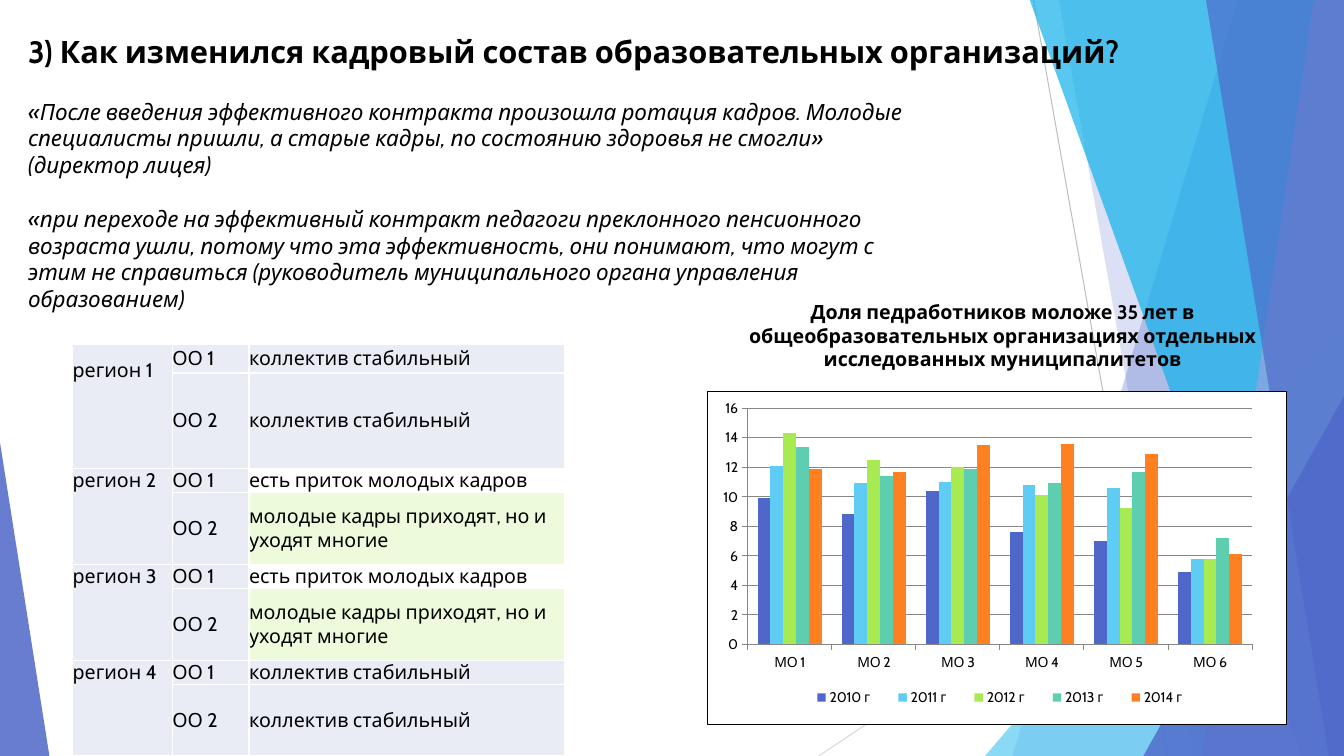
from lxml.etree import SubElement
from pptx import Presentation
from pptx.chart.data import CategoryChartData
from pptx.dml.color import RGBColor
from pptx.enum.chart import XL_CHART_TYPE as ChartType, XL_LEGEND_POSITION as LegendPosition
from pptx.enum.chart import XL_TICK_MARK as TickMark
from pptx.enum.shapes import MSO_CONNECTOR as Connector, MSO_SHAPE as Shape
from pptx.enum.text import MSO_ANCHOR as Anchor, PP_ALIGN as Align
from pptx.oxml.ns import qn
from pptx.util import Inches, Pt

FONT = "Cabin"
BLACK = RGBColor(0x00, 0x00, 0x00)
WHITE = RGBColor(0xFF, 0xFF, 0xFF)
INDIGO = RGBColor(0x4E, 0x67, 0xC8)
SKY = RGBColor(0x5E, 0xCC, 0xF3)
AZURE = RGBColor(0x12, 0xB2, 0xEB)
LAVENDER = RGBColor(0x95, 0xA4, 0xDE)
LIME = RGBColor(0xA7, 0xEA, 0x52)
TEAL = RGBColor(0x5D, 0xCE, 0xAF)
ORANGE = RGBColor(0xFF, 0x80, 0x21)
PALE_BLUE = RGBColor(0xE9, 0xEB, 0xF5)
PALE_GREEN = RGBColor(0xED, 0xFB, 0xDC)
GRAY = RGBColor(0xBF, 0xBF, 0xBF)
LIGHT_GRAY = RGBColor(0xD9, 0xD9, 0xD9)
AXIS_GRAY = RGBColor(0x87, 0x87, 0x87)

QUOTES = [
    "«После введения эффективного контракта произошла ротация кадров. Молодые специалисты "
    "пришли, а старые кадры, по состоянию здоровья не смогли» (директор лицея)",
    "«при переходе на эффективный контракт педагоги преклонного пенсионного возраста ушли, "
    "потому что эта эффективность, они понимают, что могут с этим не справиться "
    "(руководитель муниципального органа управления образованием)",
]
STABLE = [("коллектив стабильный", PALE_BLUE)] * 2
INFLOW = [("есть приток молодых кадров", WHITE),
          ("молодые кадры приходят, но и уходят многие", PALE_GREEN)]
REGIONS = [STABLE, INFLOW, INFLOW, STABLE]
SERIES = [
    ("2010 г", INDIGO, (9.9, 8.8, 10.4, 7.6, 7, 4.9)),
    ("2011 г", SKY, (12.1, 10.9, 11, 10.8, 10.6, 5.8)),
    ("2012 г", LIME, (14.3, 12.5, 12, 10.1, 9.2, 5.8)),
    ("2013 г", TEAL, (13.4, 11.4, 11.9, 10.9, 11.7, 7.2)),
    ("2014 г", ORANGE, (11.9, 11.7, 13.5, 13.6, 12.9, 6.1)),
]


def write_text(text_frame, *texts, size=14, bold=False, italic=False, align=Align.LEFT, gap=0):
    for index, text in enumerate(texts):
        paragraph = text_frame.add_paragraph() if index else text_frame.paragraphs[0]
        paragraph.alignment = align
        paragraph.space_before = Pt(gap if index else 0)
        run = paragraph.add_run()
        run.text = text
        run.font.name = FONT
        run.font.size = Pt(size)
        run.font.bold = bold
        run.font.italic = italic
        run.font.color.rgb = BLACK


def add_text(slide, box, *texts, **text_format):
    text_box = slide.shapes.add_textbox(*map(Inches, box))
    text_box.text_frame.word_wrap = True
    write_text(text_box.text_frame, *texts, **text_format)


def add_line(slide, start, end, color):
    line = slide.shapes.add_connector(Connector.STRAIGHT, *map(Inches, start + end))
    line.line.color.rgb = color
    line.line.width = Pt(0.75)
    SubElement(line._element.spPr, qn("a:effectLst"))


def paint(shape, color, opacity):
    shape.shadow.inherit = False
    shape.line.fill.background()
    shape.fill.solid()
    shape.fill.fore_color.rgb = color
    tint = shape._element.spPr.find(qn("a:solidFill"))[0]
    SubElement(tint, qn("a:alpha"), val=str(opacity * 1000))


def add_band(slide, box, top_left, bottom_left, color, opacity):
    left, top, width, height = box
    right, bottom = left + width, top + height
    corners = [(right, top), (right, bottom), (bottom_left, bottom)]
    builder = slide.shapes.build_freeform(Inches(top_left), Inches(top))
    builder.add_line_segments([(Inches(x), Inches(y)) for x, y in corners])
    paint(builder.convert_to_shape(), color, opacity)


def add_triangle(slide, box, apex, color, opacity):
    triangle = slide.shapes.add_shape(Shape.ISOSCELES_TRIANGLE, *map(Inches, box))
    triangle.adjustments[0] = apex
    paint(triangle, color, opacity)


def add_backdrop(slide, box):
    left, top, width, height = box
    right, bottom = left + width, top + height
    bands_box = (left, top - 0.01, width, height + 0.01)
    add_line(slide, (10.25, top), (11.58, bottom), GRAY)
    add_line(slide, (right, 4.03), (8.12, bottom), LIGHT_GRAY)
    add_band(slide, bands_box, 12.28, 10.04, INDIGO, 30)
    add_band(slide, bands_box, 10.5, 11.83, INDIGO, 20)
    add_triangle(slide, (right - 3.56, bottom - 4.17, 3.56, 4.17), 1, SKY, 72)
    add_band(slide, bands_box, 10.21, 12.91, AZURE, 70)
    add_band(slide, bands_box, 13.03, 11.92, LAVENDER, 70)
    add_band(slide, bands_box, 11.96, 13.18, INDIGO, 65)
    add_triangle(slide, (right - 1.99, bottom - 3.57, 1.99, 3.57), 1, INDIGO, 80)
    add_triangle(slide, (left, bottom - 3.11, 0.49, 3.11), 0, INDIGO, 85)


def format_cell(cell, text, fill, anchor=Anchor.MIDDLE):
    cell.margin_left = cell.margin_right = cell.margin_top = cell.margin_bottom = 0
    cell.vertical_anchor = anchor
    write_text(cell.text_frame, text)
    properties = cell._tc.get_or_add_tcPr()
    for side in ("lnL", "lnR", "lnT", "lnB"):
        border = SubElement(properties, qn(f"a:{side}"), w=str(Pt(1)))
        SubElement(SubElement(border, qn("a:solidFill")), qn("a:srgbClr"), val=str(WHITE))
    cell.fill.solid()
    cell.fill.fore_color.rgb = fill


def add_region_table(slide, box):
    heights = [0.28, 0.95] + [0.24, 0.71] * 3
    table = slide.shapes.add_table(len(heights), 3, *map(Inches, box)).table
    for column, width in zip(table.columns, (0.99, 0.76, 3.13)):
        column.width = Inches(width)
    for row, height in zip(table.rows, heights):
        row.height = Inches(height)
    for number, answers in enumerate(REGIONS):
        first = 2 * number
        region = table.cell(first, 0)
        region.merge(table.cell(first + 1, 0))
        format_cell(region, f"регион {number + 1}", PALE_BLUE, Anchor.TOP)
        for offset, (answer, fill) in enumerate(answers):
            format_cell(table.cell(first + offset, 1), f"ОО {offset + 1}", PALE_BLUE)
            format_cell(table.cell(first + offset, 2), answer, fill)
    table.cell(0, 0).margin_top = Inches(0.14)


def set_layout(element, x, y, w, h, inner=False):
    layout = element.find(qn("c:layout"))
    if layout is None:
        layout = element.makeelement(qn("c:layout"))
        if inner:
            element.insert(0, layout)
        else:
            element.find(qn("c:legendPos")).addnext(layout)
    manual = SubElement(layout, qn("c:manualLayout"))
    if inner:
        SubElement(manual, qn("c:layoutTarget"), val="inner")
    for mode in ("xMode", "yMode"):
        SubElement(manual, qn(f"c:{mode}"), val="edge")
    for name, value in zip("xywh", (x, y, w, h)):
        SubElement(manual, qn(f"c:{name}"), val=str(value))


def add_staff_chart(slide, box):
    data = CategoryChartData()
    data.categories = [f"МО {number}" for number in range(1, 7)]
    for name, _, values in SERIES:
        data.add_series(name, values)
    chart = slide.shapes.add_chart(ChartType.COLUMN_CLUSTERED, *map(Inches, box), data).chart
    chart.has_title = False
    chart.font.name = FONT
    chart.font.size = Pt(10)
    chart.font.color.rgb = BLACK
    plot = chart.plots[0]
    plot.gap_width = 150
    plot.overlap = 0
    plot.vary_by_categories = False
    for series, (_, color, _) in zip(plot.series, SERIES):
        series.format.fill.solid()
        series.format.fill.fore_color.rgb = color
    value_axis, category_axis = chart.value_axis, chart.category_axis
    value_axis.minimum_scale, value_axis.maximum_scale, value_axis.major_unit = 0, 16, 2
    value_axis.has_major_gridlines = True
    for axis in (value_axis, category_axis):
        axis.major_tick_mark = TickMark.OUTSIDE
    for part in (value_axis, category_axis, value_axis.major_gridlines):
        part.format.line.color.rgb = AXIS_GRAY
        part.format.line.width = Pt(0.75)
    chart.has_legend = True
    chart.legend.position = LegendPosition.BOTTOM
    chart.legend.include_in_layout = False
    chart_space = chart._chartSpace
    set_layout(chart_space.chart.plotArea, 0.07, 0.05, 0.87, 0.71, inner=True)
    set_layout(chart.legend._element, 0.15, 0.88, 0.71, 0.08)
    frame = chart_space.makeelement(qn("c:spPr"))
    chart_space.chart.addnext(frame)
    border = SubElement(frame, qn("a:solidFill"))
    SubElement(border, qn("a:srgbClr"), val=str(WHITE))
    line = SubElement(frame, qn("a:ln"), w=str(Pt(0.75)))
    SubElement(SubElement(line, qn("a:solidFill")), qn("a:srgbClr"), val=str(BLACK))


def main():
    presentation = Presentation()
    presentation.slide_width, presentation.slide_height = Inches(13.33), Inches(7.5)
    slide = presentation.slides.add_slide(presentation.slide_layouts[6])
    add_backdrop(slide, (0, 0, 13.33, 7.5))
    add_text(slide, (0.18, 0.28, 11.42, 0.63),
             "3) Как изменился кадровый состав образовательных организаций?",
             size=22, bold=True, align=Align.JUSTIFY)
    add_region_table(slide, (0.72, 3.42, 4.88, 4.08))
    add_text(slide, (7.01, 2.93, 5.87, 0.81),
             "Доля педработников моложе 35 лет в общеобразовательных организациях "
             "отдельных исследованных муниципалитетов", bold=True, align=Align.CENTER)
    add_staff_chart(slide, (7.01, 3.88, 5.76, 3.31))
    add_text(slide, (0.18, 0.92, 9.07, 2.26), *QUOTES, size=16, italic=True, gap=19)
    presentation.save("out.pptx")


if __name__ == "__main__":
    main()
